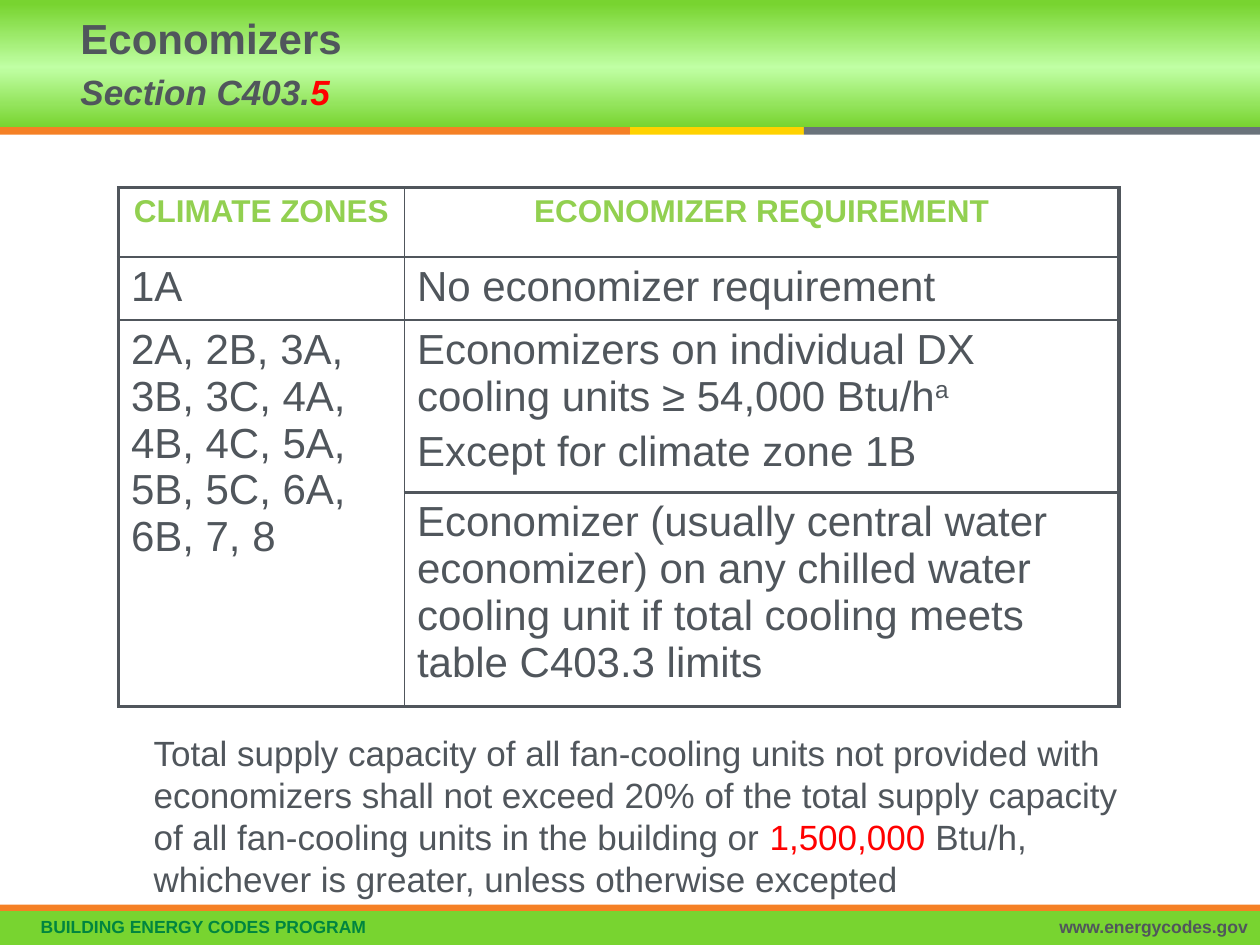
from copy import deepcopy
from dataclasses import dataclass

from lxml import etree
from pptx import Presentation
from pptx.dml.color import RGBColor
from pptx.enum.shapes import MSO_SHAPE
from pptx.enum.text import MSO_ANCHOR, PP_ALIGN
from pptx.oxml.ns import qn
from pptx.util import Inches, Pt

RECT = MSO_SHAPE.RECTANGLE
TOP, MIDDLE = MSO_ANCHOR.TOP, MSO_ANCHOR.MIDDLE
LEFT, CENTER, RIGHT = PP_ALIGN.LEFT, PP_ALIGN.CENTER, PP_ALIGN.RIGHT

COLORS = {
    "green": "78D430", "pale": "C0FFA4", "orange": "F58025", "yellow": "FFD200",
    "gray": "6A737B", "text": "50565C", "program": "00853F", "red": "FF0000",
    "heading": "92D050",
}
W, H = Inches(10), Inches(7.5)
THICK, THIN = 2.25, 1


@dataclass
class Box:
    """Position and size in percent of the slide."""
    left: float
    top: float
    width: float
    height: float

    def emu(self) -> tuple:
        return (int(W * self.left / 100), int(H * self.top / 100),
                int(W * self.width / 100), int(H * self.height / 100))


@dataclass
class Span:
    text: str
    size: float
    color: str = "text"
    bold: bool = False
    italic: bool = False
    raised: bool = False


@dataclass
class Bar:
    box: Box
    color: str


BARS = [
    Bar(Box(0, 0, 100, 13.47), "green"),
    Bar(Box(0, 96.4, 100, 3.6), "green"),
    Bar(Box(0, 13.47, 50, 0.8), "orange"),
    Bar(Box(50, 13.47, 13.8, 0.8), "yellow"),
    Bar(Box(63.8, 13.47, 36.2, 0.8), "gray"),
    Bar(Box(0, 95.73, 100, 0.67), "orange"),
]
COLS = [22.7, 56.7]
ROWS = [7.33, 6.4, 17.07, 21.2]
CELLS = {
    (0, 0): [[Span("CLIMATE ZONES", 18, "heading", True)]],
    (0, 1): [[Span("ECONOMIZER REQUIREMENT", 18, "heading", True)]],
    (1, 0): [[Span("1A", 24)]],
    (1, 1): [[Span("No economizer requirement", 24)]],
    (2, 0): [[Span("2A, 2B, 3A, 3B, 3C, 4A, 4B, 4C, 5A, 5B, 5C, 6A, 6B, 7, 8", 24)]],
    (2, 1): [[Span("Economizers on individual DX cooling units ≥ 54,000 Btu/h", 24),
              Span("a", 24, raised=True)],
             [Span("Except for climate zone 1B", 24)]],
    (3, 1): [[Span("Economizer (usually central water economizer) on any chilled water "
                   "cooling unit if total cooling meets table C403.3 limits", 24)]],
}


def rgb(name: str) -> RGBColor:
    return RGBColor.from_string(COLORS[name])


def add_spans(p, spans: list[Span]) -> None:
    for span in spans:
        r = p.add_run()
        r.text = span.text
        font = r.font
        font.name, font.size = "Arial", Pt(span.size)
        font.bold, font.italic = span.bold, span.italic
        font.color.rgb = rgb(span.color)
        if span.raised:
            r._r.get_or_add_rPr().set("baseline", "30000")


def add_bar(s, bar: Bar):
    sp = s.shapes.add_shape(RECT, *bar.box.emu())
    sp.shadow.inherit = False
    sp.fill.solid()
    sp.fill.fore_color.rgb = rgb(bar.color)
    sp.line.fill.background()
    return sp


def shade(sp) -> None:
    sp.fill.gradient()
    sp.fill.gradient_angle = 90
    stops = sp.fill.gradient_stops
    first = stops[0]._gs
    first.addnext(deepcopy(first))
    for stop, pos, color in zip(sp.fill.gradient_stops, (0, 0.47, 0.97),
                                ("green", "pale", "green")):
        stop.position = pos
        stop.color.rgb = rgb(color)


def add_text(s, box: Box, spans: list[Span], align=LEFT, anchor=TOP, spacing=None):
    sp = s.shapes.add_textbox(*box.emu())
    tf = sp.text_frame
    tf.word_wrap = True
    tf.vertical_anchor = anchor
    p = tf.paragraphs[0]
    p.alignment = align
    if spacing is not None:
        p.line_spacing = spacing
    add_spans(p, spans)
    return p


def set_border(cell, side: str, width: float) -> None:
    ln = etree.SubElement(cell._tc.get_or_add_tcPr(), qn(f"a:ln{side}"), w=str(Pt(width)))
    fill = etree.SubElement(ln, qn("a:solidFill"))
    etree.SubElement(fill, qn("a:srgbClr"), val=COLORS["text"])


def add_requirements(s, left: float, top: float) -> None:
    box = Box(left, top, sum(COLS), sum(ROWS))
    table = s.shapes.add_table(len(ROWS), len(COLS), *box.emu()).table
    table.first_row = table.horz_banding = False
    for col, share in zip(table.columns, COLS):
        col.width = int(W * share / 100)
    for row, share in zip(table.rows, ROWS):
        row.height = int(H * share / 100)
    table.cell(2, 0).merge(table.cell(3, 0))
    last = len(ROWS) - 1
    for i in range(len(ROWS)):
        for j in range(len(COLS)):
            cell = table.cell(i, j)
            heavy = {
                "L": j == 0,
                "R": j == 1,
                "T": i == 0 or (i, j) == (3, 1),
                "B": i == last or (i, j) in ((2, 0), (2, 1)),
            }
            for side, is_heavy in heavy.items():
                set_border(cell, side, THICK if is_heavy else THIN)
            cell.fill.background()
            tf = cell.text_frame
            for k, spans in enumerate(CELLS.get((i, j), [])):
                p = tf.add_paragraph() if k else tf.paragraphs[0]
                p.alignment = CENTER if i == 0 else LEFT
                if k:
                    p.space_before = Pt(4.8)
                add_spans(p, spans)


def main() -> None:
    prs = Presentation()
    prs.slide_width, prs.slide_height = W, H
    s = prs.slides.add_slide(prs.slide_layouts[6])

    header, *_ = [add_bar(s, bar) for bar in BARS]
    shade(header)

    add_text(s, Box(2.25, 96.53, 60, 3.47),
             [Span("BUILDING ENERGY CODES PROGRAM", 10, "program", True)], spacing=0.9)
    add_text(s, Box(59.9, 96.53, 40.1, 3.47),
             [Span("www.energycodes.gov", 10, bold=True)], RIGHT, spacing=0.9)

    title = add_text(s, Box(5.4, 0, 58.5, 13.47),
                     [Span("Economizers", 24, bold=True), Span(" ", 26)],
                     anchor=MIDDLE, spacing=Pt(28))
    title.add_line_break()
    add_spans(title, [Span("Section C403.", 20, bold=True, italic=True),
                      Span("5", 20, "red", True, True)])

    add_requirements(s, 9.4, 19.87)

    add_text(s, Box(11.2, 76.8, 80.1, 19.33), [
        Span("Total supply capacity of all fan-cooling units not provided with economizers "
             "shall not exceed 20% of the total supply capacity of all fan-cooling units "
             "in the building or ", 20),
        Span("1,500,000", 20, "red"),
        Span(" Btu/h, whichever is greater, unless otherwise excepted", 20),
    ])

    prs.save("out.pptx")


if __name__ == "__main__":
    main()
